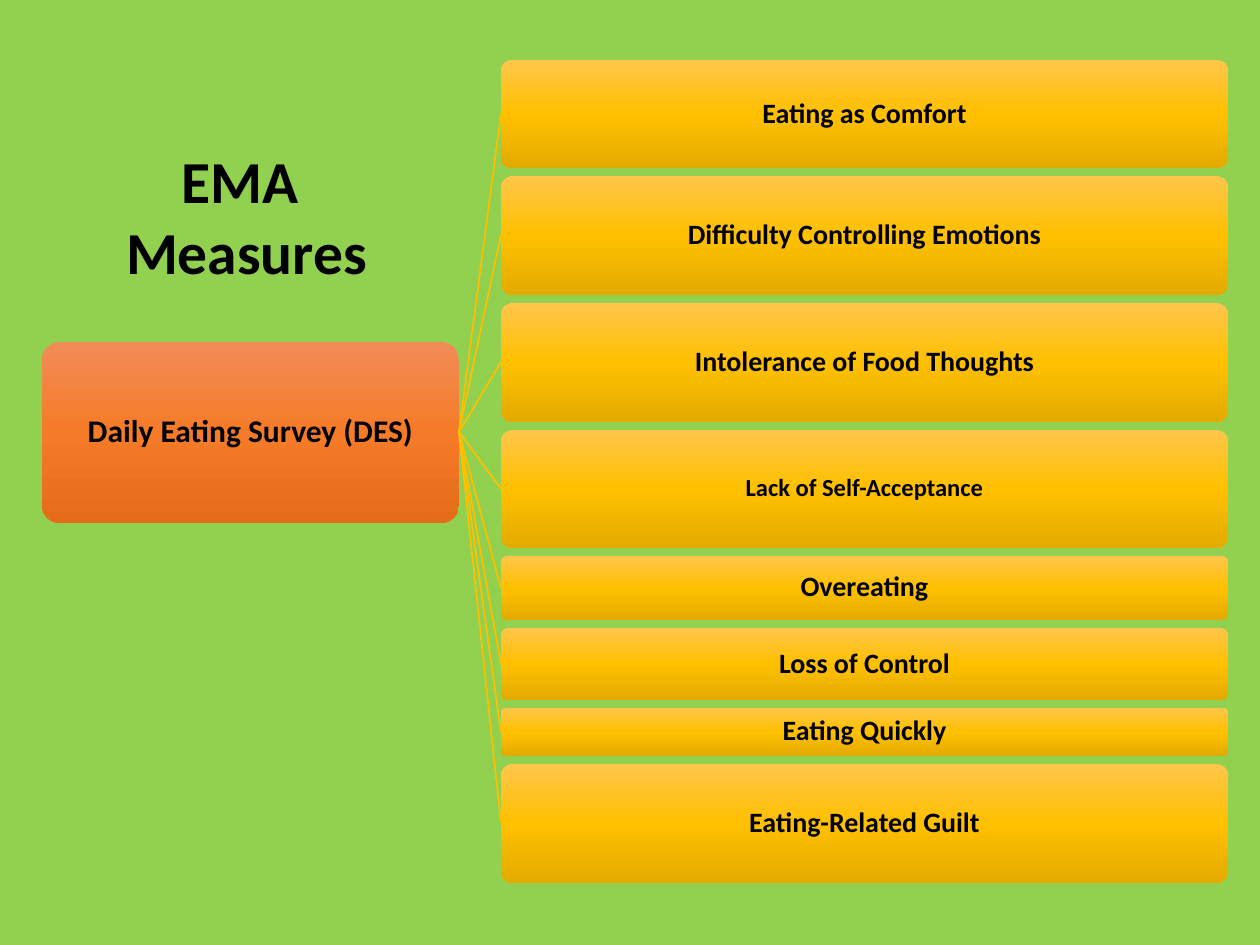
import copy
from dataclasses import dataclass

import pptx
import pptx.dml.color
import pptx.enum.shapes
import pptx.enum.text
import pptx.oxml
import pptx.oxml.ns
import pptx.util

PX = 914400 / 126  # EMU in one px


@dataclass(frozen=True)
class Theme:
    font: str = "Calibri"
    background: str = "92D050"
    text: str = "000000"
    line: str = "FFC000"
    survey: tuple = ("F18C57", "F67B28", "E56C19")
    measure: tuple = ("FFC64B", "FFC000", "E3AB00")
    title_size: int = 34
    survey_size: int = 18
    measure_size: int = 16
    small_size: int = 14


def emu(*lengths):
    return [pptx.util.Emu(round(n * PX)) for n in lengths]


def rgb(value):
    return pptx.dml.color.RGBColor.from_string(value)


class Deck:
    def __init__(self, theme):
        self.theme = theme
        self.prs = pptx.Presentation()
        self.prs.slide_width, self.prs.slide_height = emu(1260, 945)
        self.s = None

    def add_slide(self):
        self.s = self.prs.slides.add_slide(self.prs.slide_layouts[5])
        fill = self.s.background.fill
        fill.solid()
        fill.fore_color.rgb = rgb(self.theme.background)

    def set_text(self, tf, text, size, spacing):
        tf.text = text
        tf.word_wrap = True
        tf.auto_size = pptx.enum.text.MSO_AUTO_SIZE.NONE
        tf.vertical_anchor = pptx.enum.text.MSO_ANCHOR.MIDDLE
        for p in tf.paragraphs:
            p.alignment = pptx.enum.text.PP_ALIGN.CENTER
            p.line_spacing = spacing
            for r in p.runs:
                r.font.name = self.theme.font
                r.font.size = pptx.util.Pt(size)
                r.font.bold = True
                r.font.color.rgb = rgb(self.theme.text)

    def title(self, text, x, y, w, h):
        sp = self.s.shapes.title
        sp.left, sp.top, sp.width, sp.height = emu(x, y, w, h)
        self.set_text(sp.text_frame, text, self.theme.title_size, 1.0)

    def gradient(self, sp, colors):
        sp.fill.gradient()
        sp.fill.gradient_angle = 270  # counter-clockwise, so top to bottom
        stops = sp._element.spPr.find(".//" + pptx.oxml.ns.qn("a:gsLst"))
        stops.append(copy.deepcopy(stops[-1]))
        for i, (stop, color) in enumerate(zip(sp.fill.gradient_stops, colors)):
            stop.position = i / 2
            stop.color.rgb = rgb(color)

    def box(self, text, x, y, w, h, colors, size):
        kind = pptx.enum.shapes.MSO_SHAPE.ROUNDED_RECTANGLE
        sp = self.s.shapes.add_shape(kind, *emu(x, y, w, h))
        sp.adjustments[0] = 0.1
        sp.shadow.inherit = False
        sp.line.fill.background()
        self.gradient(sp, colors)
        tf = sp.text_frame
        tf.margin_left = tf.margin_right = tf.margin_top = tf.margin_bottom = emu(1)[0]
        self.set_text(tf, text, size, 0.9)

    def link(self, x1, y1, x2, y2):
        kind = pptx.enum.shapes.MSO_CONNECTOR.STRAIGHT
        line = self.s.shapes.add_connector(kind, *emu(x1, y1, x2, y2))
        line.line.color.rgb = rgb(self.theme.line)
        line.line.width = pptx.util.Pt(1)
        effects = pptx.oxml.parse_xml("<a:effectLst %s/>" % pptx.oxml.ns.nsdecls("a"))
        line._element.spPr.append(effects)


def main():
    theme = Theme()
    deck = Deck(theme)
    deck.add_slide()

    # Heading
    deck.title("EMA \nMeasures", -21, 136, 535, 158)

    # Survey on the left
    x, y, w, h = 42, 342, 417, 181
    deck.box("Daily Eating Survey (DES)", x, y, w, h, theme.survey, theme.survey_size)
    hub_x, hub_y = x + w, y + h // 2

    # Measures stacked on the right, each linked to the survey
    measures = [
        ("Eating as Comfort", 108, theme.measure_size),
        ("Difficulty Controlling Emotions", 119, theme.measure_size),
        ("Intolerance of Food Thoughts", 119, theme.measure_size),
        ("Lack of Self-Acceptance", 118, theme.small_size),
        ("Overeating", 64, theme.measure_size),
        ("Loss of Control", 72, theme.measure_size),
        ("Eating Quickly", 48, theme.measure_size),
        ("Eating-Related Guilt", 119, theme.measure_size),
    ]
    left, top, width, gap = 501, 60, 727, 8
    for text, height, size in measures:
        deck.link(hub_x, hub_y, left, top + height // 2)
        deck.box(text, left, top, width, height, theme.measure, size)
        top += height + gap

    deck.prs.save("out.pptx")


if __name__ == "__main__":
    main()
